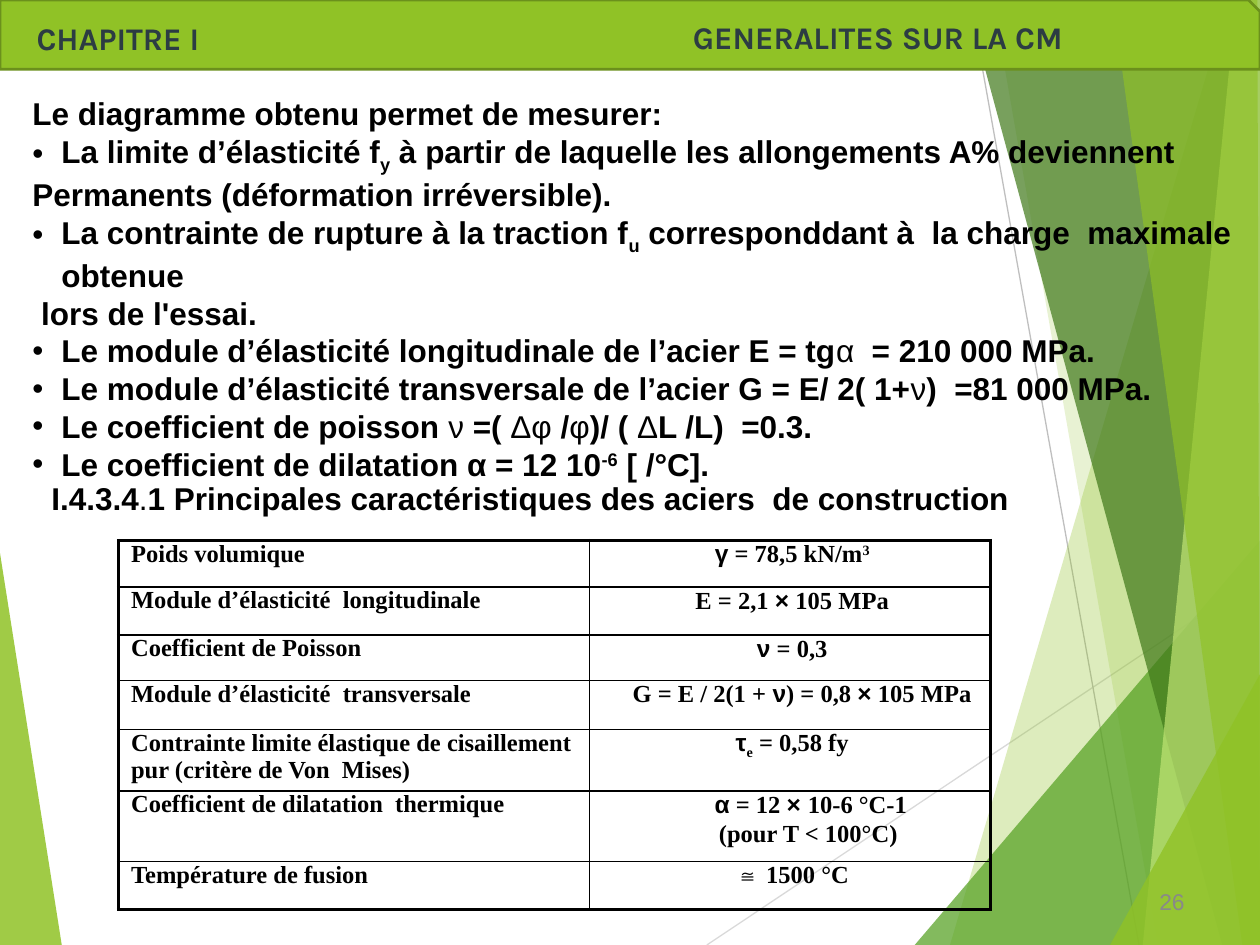
"""Build the slide on steel characteristics, on a grid of 100 columns by 75 rows."""
import pptx
import pptx.util
import pptx.dml.color
import pptx.enum.shapes
import pptx.enum.text
import pptx.oxml
import pptx.oxml.ns

Pt = pptx.util.Pt
RGB = pptx.dml.color.RGBColor.from_string
ALIGN = pptx.enum.text.PP_ALIGN
KINDS = pptx.enum.shapes
tag = pptx.oxml.ns.qn
HUES = {"lime": "90C226", "green": "54A021", "dark": "3F7819", "pale": "C0E474",
        "edge": "6B901C", "slate": "2C3C43", "black": "000000", "light": "D9D9D9",
        "mid": "BFBFBF", "grey": "898989"}

deck = pptx.Presentation()
deck.slide_width, deck.slide_height = pptx.util.Inches(10), pptx.util.Inches(7.5)
col, row = deck.slide_width // 100, deck.slide_height // 75
slide = deck.slides.add_slide(deck.slide_layouts[6])
shapes = slide.shapes


def node(host, name, **attrs):
    """Append an XML child with its attributes and return it."""
    child = pptx.oxml.parse_xml(f'<{name} {pptx.oxml.ns.nsdecls("a")}/>')
    for key, value in attrs.items():
        child.set(key, str(value))
    host.append(child)
    return child


def write(para, text, size=18, font="Arial", hue="black", other="", align=ALIGN.LEFT,
          before=0, left=0, hang=0, bullet=False):
    """Fill a paragraph; pieces split by | start with _ (sub), ^ (super) or * (other style)."""
    para.alignment, para.space_before = align, Pt(before)
    prop = para._p.get_or_add_pPr()
    prop.set("marL", str(int(left * col)))
    prop.set("indent", str(int(hang * col)))
    if bullet:
        node(prop, "a:buFont", typeface="Arial")
        node(prop, "a:buChar", char="•")
    for piece in text.split("|"):
        mark = piece[0] if piece[0] in "_^*" else ""
        run = para.add_run()
        run.text = piece[len(mark):]
        run.font.size, run.font.color.rgb = Pt(size), RGB(HUES[hue])
        run.font.bold = mark != "*" or bool(other)
        run.font.name = other if mark == "*" and other else font
        if mark in ("_", "^"):
            run._r.get_or_add_rPr().set("baseline", {"_": "-25000", "^": "30000"}[mark])


rays = [("light", 56.1, 75, 100, 45.7), ("mid", 77, 0, 90.4, 75)]
bands = [
    ("lime", 85, [(0, 43.9), (4.9, 75), (0, 75)]),
    ("lime", 30, [(97.5, 0), (75.4, 75), (100, 75), (100, 0)]),
    ("lime", 20, [(78.8, 0), (91.9, 75), (100, 75), (100, 0)]),
    ("green", 72, [(72.6, 75), (100, 42.9), (100, 75)]),
    ("dark", 70, [(76.7, 0), (97, 75), (100, 75), (100, 0)]),
    ("pale", 70, [(98.1, 0), (90.7, 75), (100, 75), (100, 0)]),
    ("lime", 65, [(88.3, 0), (98.6, 75), (100, 75), (99.8, 0)]),
    ("lime", 80, [(88.1, 75), (100, 53.5), (100, 75)]),
]
for hue, x, y, right, low in rays:
    ray = shapes.add_connector(KINDS.MSO_CONNECTOR.STRAIGHT, int(x * col), int(y * row),
                               int(right * col), int(low * row))
    ray.line.color.rgb, ray.line.width = RGB(HUES[hue]), Pt(0.75)
    node(ray._element.spPr, "a:effectLst")
for hue, alpha, dots in bands:
    dots = [(int(x * col), int(y * row)) for x, y in dots]
    form = shapes.build_freeform(*dots[0])
    form.add_line_segments(dots[1:], close=True)
    band = form.convert_to_shape()
    band.shadow.inherit = False
    band.fill.solid()
    band.fill.fore_color.rgb = RGB(HUES[hue])
    node(band._element.spPr.find(".//" + tag("a:srgbClr")), "a:alpha", val=alpha * 1000)
    band.line.fill.background()

head = shapes.add_shape(KINDS.MSO_SHAPE.SNIP_1_RECTANGLE, 0, 0, 100 * col, int(5.5 * row))
head.shadow.inherit = False
head.fill.solid()
head.fill.fore_color.rgb = RGB(HUES["lime"])
head.line.color.rgb, head.line.width = RGB(HUES["edge"]), Pt(1.5)
title = shapes.add_textbox(54 * col, 0, 40 * col, int(5.5 * row))
for box, text, inset in ((head, "CHAPITRE I", 2.9), (title, "GENERALITES SUR LA CM", 1)):
    frame = box.text_frame
    frame.word_wrap = True
    frame.margin_left = int(inset * col)
    frame.vertical_anchor = pptx.enum.text.MSO_ANCHOR.MIDDLE
    if box is title:
        frame.margin_top = int(0.9 * row)
    write(frame.paragraphs[0], text, font="Karla", hue="slate")

points = [
    (False, "Le diagramme obtenu permet de mesurer:"),
    (True, "La limite d’élasticité f|_y| à partir de laquelle les allongements A% deviennent"),
    (False, "Permanents (déformation irréversible)."),
    (True, "La contrainte de rupture à la traction f|_u| corresponddant à  la charge  maximale obtenue"),
    (False, " lors de l'essai."),
    (True, "Le module d’élasticité longitudinale de l’acier E = tg|*α | = 210 000 MPa."),
    (True, "Le module d’élasticité transversale de l’acier G = E/ 2( 1+|*ν|)  =81 000 MPa."),
    (True, "Le coefficient de poisson |*ν |=( |*Δφ |/|*φ|)/ ( |*Δ|L /L)  =0.3."),
    (True, "Le coefficient de dilatation α = 12 10|^-6| [ /°C]."),
]
texts = [
    (1.6, 7, 107.3, 28.3, points),
    (3.1, 37.5, 89.1, 7.1,
     [(False, "I.4.3.4|*.|1 Principales caractéristiques des aciers  de construction")]),
]
for x, y, wide, high, lines in texts:
    frame = shapes.add_textbox(int(x * col), int(y * row), int(wide * col), int(high * row)).text_frame
    frame.word_wrap = True
    for i, (dot, line) in enumerate(lines):
        para = frame.paragraphs[0] if i == 0 else frame.add_paragraph()
        write(para, line, bullet=dot, left=2.3 * dot, hang=-2.3 * dot)

page = shapes.add_textbox(88 * col, 70 * row, 7 * col, 3 * row).text_frame
write(page.paragraphs[0], "*26", size=13, hue="grey", align=ALIGN.RIGHT)

facts = [
    (3.7, "Poids volumique", [(0.35, "*γ| = 78,5 kN/m|^3")]),
    (3.8, "Module d’élasticité  longitudinale", [(0.35, "E = 2,1 |*×| 105 MPa")]),
    (3.6, "Coefficient de Poisson", [(0.35, "*ν| = 0,3")]),
    (3.9, "Module d’élasticité  transversale", [(1.9, "G = E / 2(1 + |*ν|) = 0,8 |*×| 105 MPa")]),
    (4.9, "Contrainte limite élastique de cisaillement pur (critère de Von  Mises)",
     [(0.35, "*τ|_e| = 0,58 fy")]),
    (5.6, "Coefficient de dilatation  thermique",
     [(3.3, "*α| = 12 |*× |10-6 °C-1"), (2.9, "(pour T < 100°C)")]),
    (3.8, "Température de fusion", [(0.35, "*≅| 1500 °C")]),
]
last = len(facts) - 1
grid = shapes.add_table(len(facts), 2, int(9.4 * col), int(42.9 * row),
                        int(69.2 * col), int(29.3 * row)).table
grid.first_row = grid.horz_banding = False
for c, wide in enumerate((37.4, 31.8)):
    grid.columns[c].width = int(wide * col)
for r, (high, name, values) in enumerate(facts):
    grid.rows[r].height = int(high * row)
    for c, lines in enumerate(([(1, name)], values)):
        cell = grid.cell(r, c)
        cell.margin_left = cell.margin_right = cell.margin_top = cell.margin_bottom = 0
        prop = cell._tc.get_or_add_tcPr()
        for side, thick in (("L", c == 0), ("R", c == 1), ("T", r == 0), ("B", r == last)):
            edge = node(prop, "a:ln" + side, w=Pt(2.25 if thick else 1))
            node(node(edge, "a:solidFill"), "a:srgbClr", val=HUES["black"])
        cell.fill.background()
        for i, (inset, line) in enumerate(lines):
            para = cell.text_frame.paragraphs[0] if i == 0 else cell.text_frame.add_paragraph()
            write(para, line, size=14, font="Times New Roman", other="Arial", left=inset,
                  before=(2.8, 1)[c], align=(ALIGN.LEFT, ALIGN.CENTER)[c])

deck.save("out.pptx")
